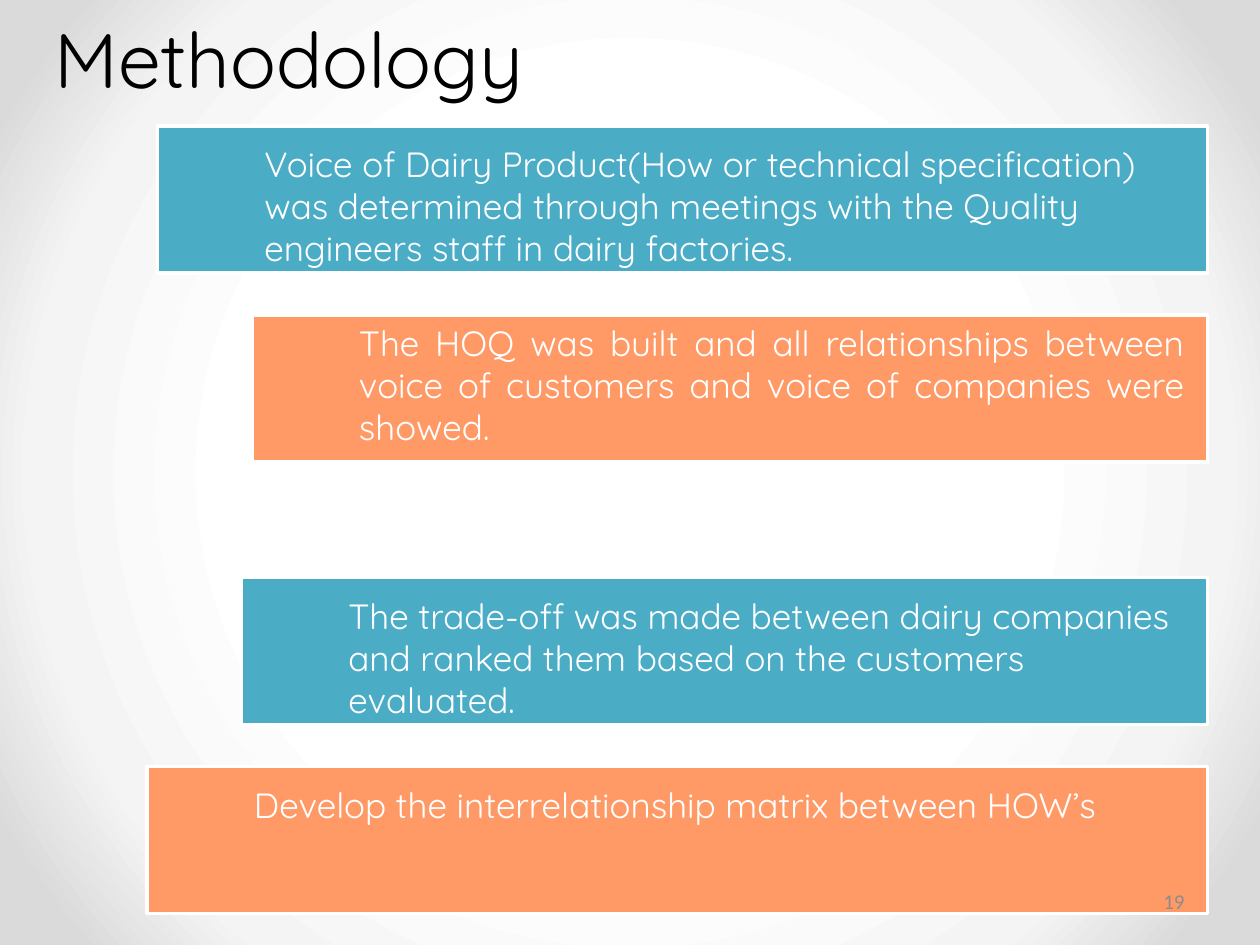
import pptx
import pptx.dml.color
import pptx.enum.shapes
import pptx.enum.text
import pptx.oxml
import pptx.oxml.ns
import pptx.util

PX = 7620  # EMU; 120 px to the inch
COLORS = {
    "teal": "4BACC6", "orange": "FF9966", "white": "FFFFFF",
    "black": "000000", "gray": "8C8C8C", "mist": "F4F4F4", "edge": "DADADA",
}
ALIGN = pptx.enum.text.PP_ALIGN
ANCHOR = pptx.enum.text.MSO_ANCHOR
BAR_RIGHT, BAR_H, INDENT = 1150, 140, 90


def rgb(name):
    return pptx.dml.color.RGBColor.from_string(COLORS[name])


class Deck:
    """Holds the style and the current slide."""
    font = "Quicksand"

    def __init__(self, prs):
        self.s = prs.slides.add_slide(prs.slide_layouts[6])

    def background(self, stops):
        """Circular gradient from the centre; stops are (percent, color)."""
        self.s.background.fill.gradient()
        old = self.s.element.find(".//" + pptx.oxml.ns.qn("a:gradFill"))
        gs = "".join(f'<a:gs pos="{pos * 1000}"><a:srgbClr val="{COLORS[c]}"/></a:gs>'
                     for pos, c in stops)
        new = pptx.oxml.parse_xml(
            f'<a:gradFill {pptx.oxml.ns.nsdecls("a")} rotWithShape="1">'
            f'<a:gsLst>{gs}</a:gsLst><a:path path="circle">'
            '<a:fillToRect l="50000" t="50000" r="50000" b="50000"/>'
            '</a:path></a:gradFill>')
        old.getparent().replace(old, new)

    def bar(self, x, y, color):
        sp = self.s.shapes.add_shape(
            pptx.enum.shapes.MSO_SHAPE.RECTANGLE,
            x * PX, y * PX, (BAR_RIGHT - x) * PX, BAR_H * PX)
        sp.shadow.inherit = False
        sp.fill.solid()
        sp.fill.fore_color.rgb = rgb(color)
        sp.line.color.rgb = rgb("white")
        sp.line.width = pptx.util.Pt(2)

    def text(self, x, y, w, h, text, size=20, color="white", font=None,
             align=ALIGN.LEFT, anchor=ANCHOR.TOP, grow=False):
        sp = self.s.shapes.add_textbox(x * PX, y * PX, w * PX, h * PX)
        tf = sp.text_frame
        tf.word_wrap = True
        tf.vertical_anchor = anchor
        if grow:
            tf.auto_size = pptx.enum.text.MSO_AUTO_SIZE.SHAPE_TO_FIT_TEXT
        p = tf.paragraphs[0]
        p.alignment = align
        r = p.add_run()
        r.text = text
        r.font.size = pptx.util.Pt(size)
        r.font.name = font or self.font
        r.font.color.rgb = rgb(color)


def main():
    prs = pptx.Presentation()
    prs.slide_width, prs.slide_height = 1200 * PX, 900 * PX
    deck = Deck(prs)
    deck.background([(50, "white"), (76, "mist"), (92, "edge")])

    # bar left, bar top, color, text top, text width, text height, alignment, text
    steps = [
        (150, 120, "teal", 130, 900, 133, ALIGN.LEFT,
         "Voice of Dairy Product(How or technical specification) was determined "
         "through meetings with the Quality engineers staff in dairy factories."),
        (240, 300, "orange", 300, 810, 133, ALIGN.JUSTIFY,
         "The HOQ was built and all relationships between voice of customers "
         "and voice of companies were showed."),
        (230, 550, "teal", 560, 830, 133, ALIGN.LEFT,
         "The trade-off was made between dairy companies and ranked them based "
         "on the customers evaluated."),
        (140, 730, "orange", 740, 910, 53, ALIGN.LEFT,
         "Develop the interrelationship matrix between HOW’s"),
    ]
    for x, y, color, *_ in steps:
        deck.bar(x, y, color)
    deck.text(40, -20, 1080, 150, "Methodology", size=44, color="black",
              anchor=ANCHOR.MIDDLE)
    deck.text(860, 834, 280, 48, "19", size=12, color="gray", font="Calibri",
              align=ALIGN.RIGHT, anchor=ANCHOR.MIDDLE)
    for x, _, _, y, w, h, align, text in steps:
        deck.text(x + INDENT, y, w, h, text, align=align, grow=True)

    prs.save("out.pptx")


if __name__ == "__main__":
    main()
